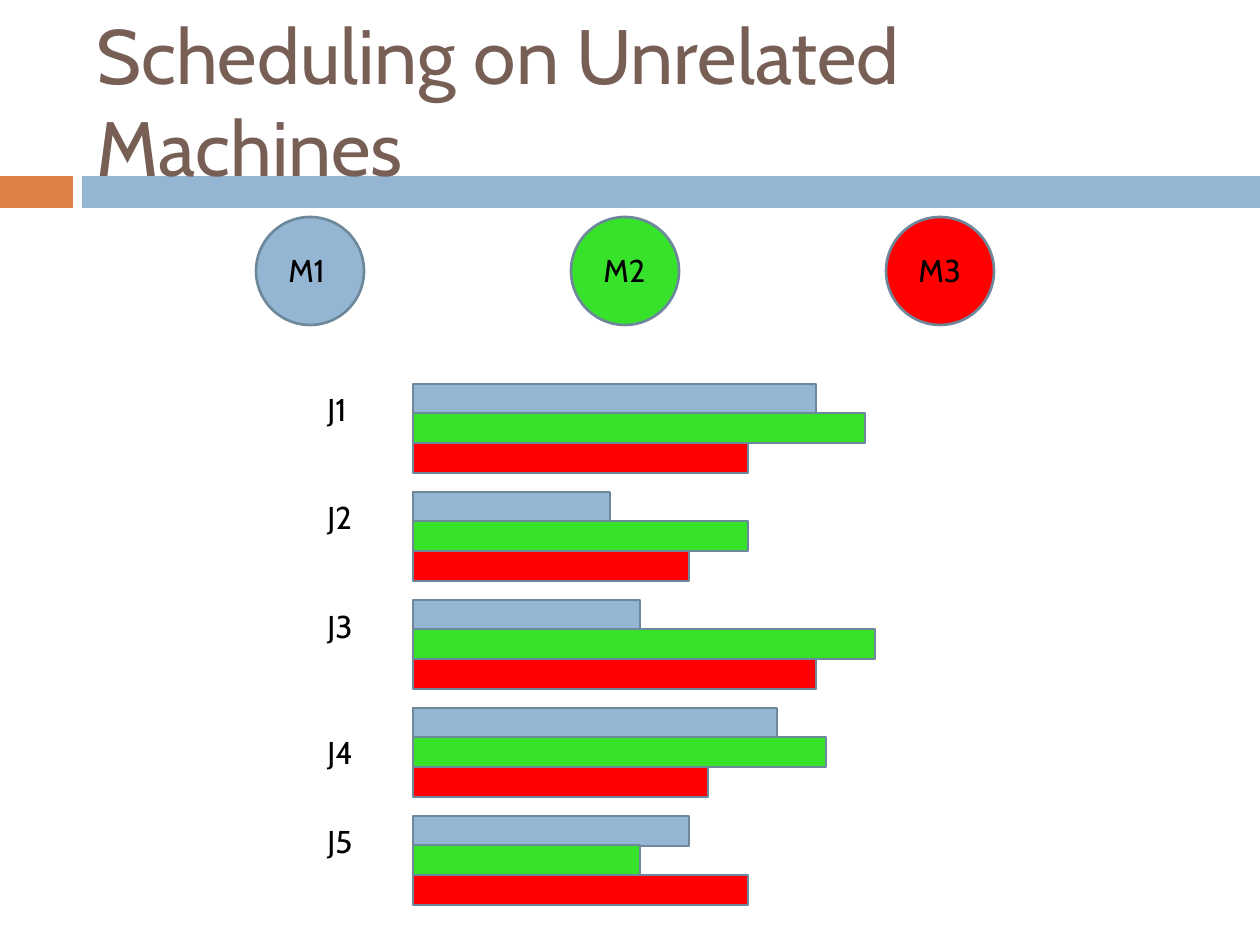
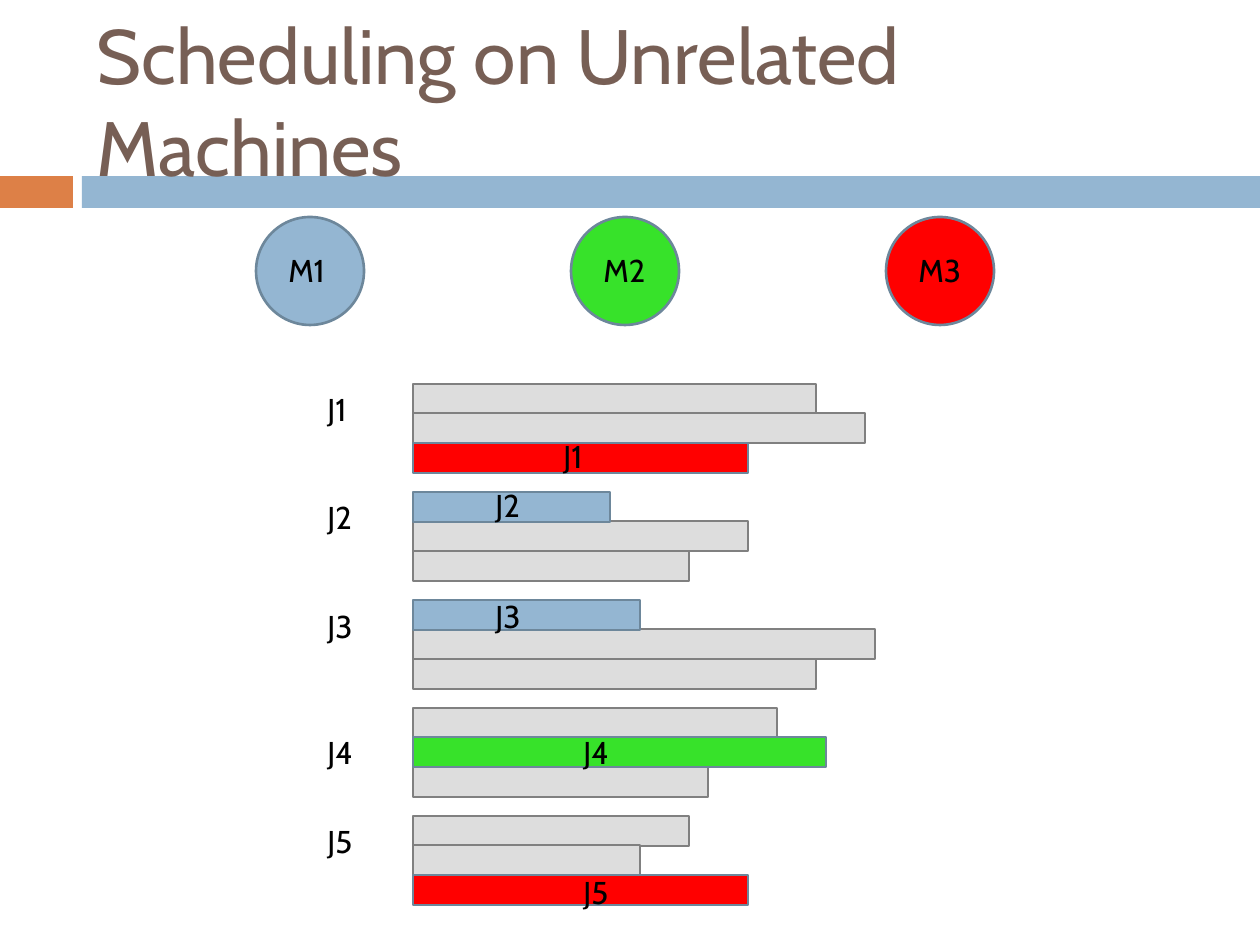
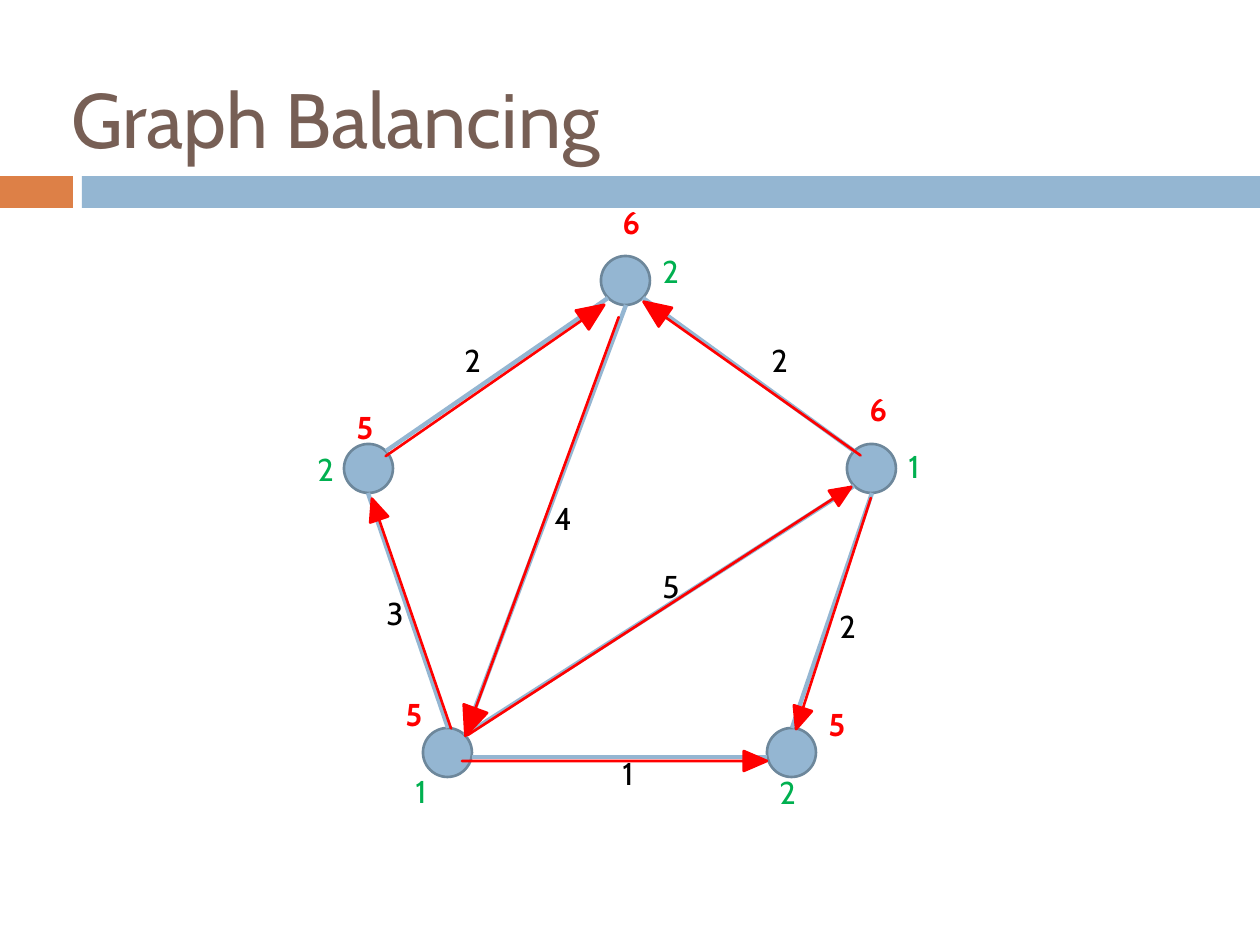
from math import cos, radians, sin

from lxml import etree
from pptx import Presentation
from pptx.dml.color import RGBColor
from pptx.enum.shapes import MSO_CONNECTOR, MSO_SHAPE
from pptx.enum.text import MSO_ANCHOR, MSO_AUTO_SIZE
from pptx.oxml.ns import qn
from pptx.util import Emu, Pt

PX_PER_INCH = 126
FONT = "Cabin"

BROWN = RGBColor(0x77, 0x5F, 0x55)
ORANGE = RGBColor(0xDD, 0x80, 0x47)
BLUE = RGBColor(0x94, 0xB6, 0xD2)
SLATE = RGBColor(0x6D, 0x87, 0x9B)
LIME = RGBColor(0x37, 0xE2, 0x2A)
RED = RGBColor(0xFF, 0x00, 0x00)
GREEN = RGBColor(0x00, 0xB0, 0x50)
BLACK = RGBColor(0x00, 0x00, 0x00)
LIGHT_GREY = RGBColor(0xDD, 0xDD, 0xDD)
GREY = RGBColor(0x80, 0x80, 0x80)

MACHINE_COLORS = [BLUE, LIME, RED]

# Processing time of each job on M1, M2 and M3, as bar lengths
JOB_TIMES = [
    (403, 452, 335),
    (197, 335, 276),
    (227, 462, 403),
    (364, 413, 295),
    (276, 227, 335),
]
JOB_LABEL_TOPS = [384, 492, 601, 727, 816]
BARS_LEFT, BARS_TOP = 413, 384
JOB_PITCH, BAR_HEIGHT = 108, 30

# Chosen machine of each job, then left and top of the label on its bar
ASSIGNMENT = [(2, 551, 431), (0, 483, 480), (0, 483, 591), (1, 571, 727), (2, 571, 867)]

NODE_SIZE = 49
NODES = {
    "right": (847, 444),
    "bottom left": (423, 728),
    "left": (344, 444),
    "top": (601, 256),
    "bottom right": (767, 728),
}
# Start node and angle, end node and angle (clockwise from east), drop
EDGES = [
    ("left", 315, "top", 135, 0),
    ("left", 90, "bottom left", 270, 0),
    ("top", 45, "right", 225, 0),
    ("right", 90, "bottom right", 270, 0),
    ("bottom left", 0, "bottom right", 180, 5),
    ("bottom left", 315, "top", 90, 0),
    ("bottom left", 315, "right", 135, 0),
]
# Left, top, width, height, rotation
ORIENTATIONS = [
    (362, 369, 266, 23, 325.3),
    (290, 604, 243, 19, 251),
    (319, 514, 446, 25, 110.1),
    (619, 367, 266, 23, 215.3),
    (431, 602, 457, 18, 327.1),
    (462, 751, 305, 20, 0),
    (712, 604, 243, 19, 107.9),
]
EDGE_WEIGHTS = [
    ("2", 452, 335), ("2", 759, 335), ("4", 542, 493), ("3", 374, 588),
    ("5", 650, 561), ("2", 827, 601), ("1", 610, 748),
]
NODE_LOADS = [
    ("6", 610, 197), ("5", 344, 402), ("6", 857, 384), ("5", 393, 689), ("5", 816, 699),
]
NODE_WEIGHTS = [
    ("2", 650, 246), ("1", 896, 441), ("2", 767, 767), ("2", 305, 444), ("1", 403, 766),
]


def px(length):
    return Emu(round(length * 914400 / PX_PER_INCH))


def add_figure(shapes, kind, left, top, width, height, fill, outline=None):
    figure = shapes.add_shape(kind, px(left), px(top), px(width), px(height))
    figure.shadow.inherit = False
    figure.fill.solid()
    figure.fill.fore_color.rgb = fill
    if outline is None:
        figure.line.fill.background()
    else:
        figure.line.color.rgb = outline
        figure.line.width = Pt(1.5)
    return figure


def add_text(shapes, text, left, top, width, height=50, size=18, color=BLACK, bold=False):
    box = shapes.add_textbox(px(left), px(top), px(width), px(height))
    frame = box.text_frame
    frame.word_wrap = True
    frame.auto_size = MSO_AUTO_SIZE.SHAPE_TO_FIT_TEXT
    paragraph = frame.paragraphs[0]
    paragraph.text = text
    paragraph.font.name = FONT
    paragraph.font.size = Pt(size)
    paragraph.font.color.rgb = color
    paragraph.font.bold = bold
    return frame


def add_titled_slide(deck, title, left, top, width, height):
    """Add a blank slide with the two-part band and its title."""
    shapes = deck.slides.add_slide(deck.slide_layouts[6]).shapes
    add_figure(shapes, MSO_SHAPE.RECTANGLE, 0, 176, 73, 32, ORANGE)
    add_figure(shapes, MSO_SHAPE.RECTANGLE, 82, 176, 1178, 32, BLUE)
    frame = add_text(shapes, title, left, top, width, height, size=44, color=BROWN)
    frame.auto_size = MSO_AUTO_SIZE.NONE
    frame.vertical_anchor = MSO_ANCHOR.MIDDLE
    return shapes


def add_machines(shapes):
    for index, color in enumerate(MACHINE_COLORS):
        left = 256 + 315 * index
        machine = shapes.add_group_shape().shapes
        add_figure(machine, MSO_SHAPE.OVAL, left, 217, 108, 108, color, SLATE)
        add_text(machine, f"M{index + 1}", left + 20, 245, 108)


def add_bar(shapes, job, machine, fill, outline):
    top = BARS_TOP + JOB_PITCH * job + 59 * machine // 2
    add_figure(shapes, MSO_SHAPE.RECTANGLE, BARS_LEFT, top,
               JOB_TIMES[job][machine], BAR_HEIGHT, fill, outline)


def add_scheduling_slide(deck, assignment=None):
    """Show all times, or only the chosen ones in colour if an assignment is given."""
    shapes = add_titled_slide(deck, "Scheduling on Unrelated Machines", 84, 32, 1124, 136)
    add_machines(shapes)
    for job, label_top in enumerate(JOB_LABEL_TOPS):
        add_text(shapes, f"J{job + 1}", 315, label_top, 108)
        for machine, color in enumerate(MACHINE_COLORS):
            if assignment is None:
                add_bar(shapes, job, machine, color, SLATE)
            elif machine != assignment[job][0]:
                add_bar(shapes, job, machine, LIGHT_GREY, GREY)
    for job, (machine, left, top) in enumerate(assignment or []):
        chosen = shapes.add_group_shape().shapes
        add_bar(chosen, job, machine, MACHINE_COLORS[machine], SLATE)
        add_text(chosen, f"J{job + 1}", left, top, 108)


def rim_point(node, angle):
    left, top = NODES[node]
    radius = NODE_SIZE / 2
    return (round(left + radius + radius * cos(radians(angle))),
            round(top + radius + radius * sin(radians(angle))))


def add_edge(shapes, start, start_angle, end, end_angle, drop):
    x1, y1 = rim_point(start, start_angle)
    x2, y2 = rim_point(end, end_angle)
    edge = shapes.add_connector(MSO_CONNECTOR.STRAIGHT, px(x1), px(y1 + drop),
                                px(x2), px(y2 + drop))
    edge.line.color.rgb = BLUE
    edge.line.width = Pt(2.5)
    etree.SubElement(edge._element.spPr, qn("a:effectLst"))


def add_orientation(shapes, left, top, width, height, rotation):
    arrow = add_figure(shapes, MSO_SHAPE.RIGHT_ARROW, left, top, width, height, RED, RED)
    arrow.adjustments[0] = 0
    arrow.adjustments[1] = 1.161
    arrow.rotation = rotation


def add_graph_slide(deck):
    shapes = add_titled_slide(deck, "Graph Balancing", 59, 39, 1134, 158)
    for left, top in NODES.values():
        add_figure(shapes, MSO_SHAPE.OVAL, left, top, NODE_SIZE, NODE_SIZE, BLUE, SLATE)
    for edge in EDGES:
        add_edge(shapes, *edge)
    for weight, left, top in EDGE_WEIGHTS:
        add_text(shapes, weight, left, top, 39)
    for orientation in ORIENTATIONS:
        add_orientation(shapes, *orientation)
    for load, left, top in NODE_LOADS:
        add_text(shapes, load, left, top, 49, color=RED, bold=True)
    for weight, left, top in NODE_WEIGHTS:
        add_text(shapes, weight, left, top, 49, color=GREEN)


def main():
    deck = Presentation()
    deck.slide_width, deck.slide_height = px(1260), px(945)
    add_scheduling_slide(deck)
    add_scheduling_slide(deck, ASSIGNMENT)
    add_graph_slide(deck)
    deck.save("out.pptx")


if __name__ == "__main__":
    main()
